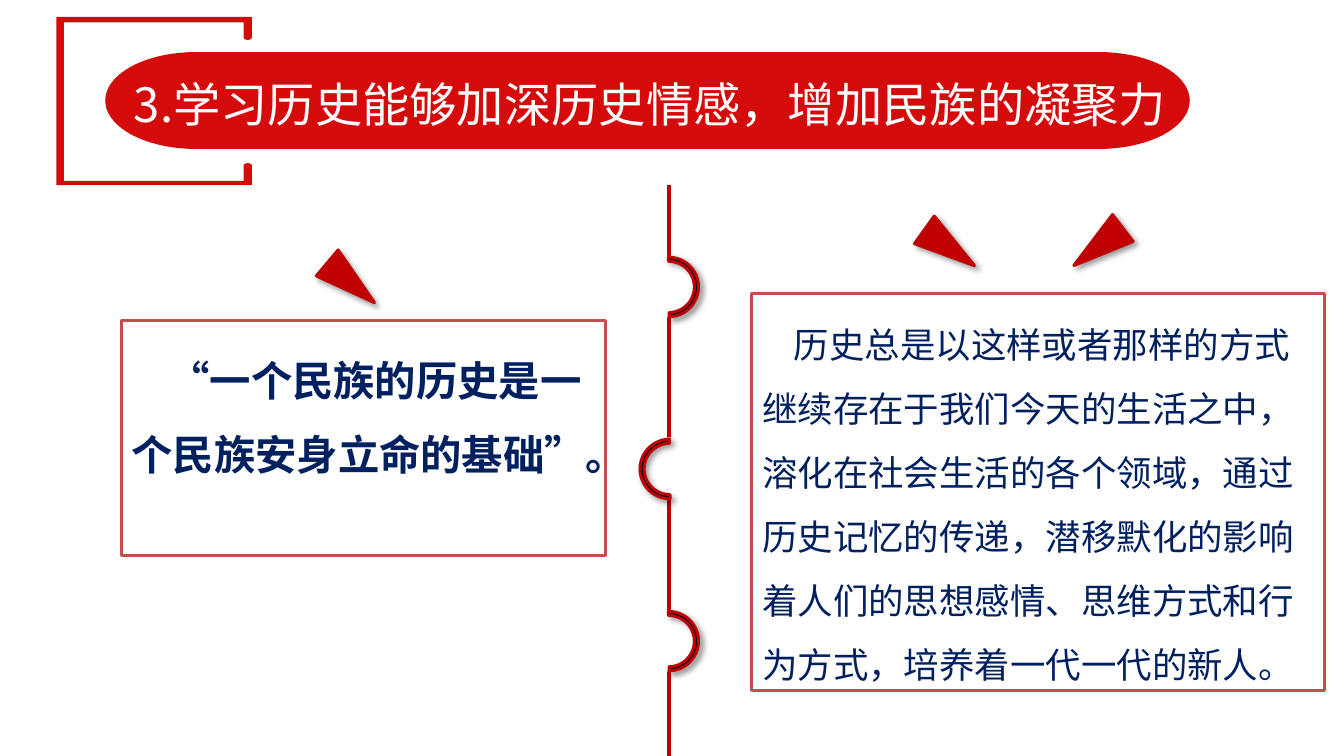
"""Build the slide on history and national cohesion."""
import math
import lxml.etree
import pptx
import pptx.dml.color
import pptx.enum.shapes
import pptx.enum.text
import pptx.oxml.ns
import pptx.util

Pt = pptx.util.Pt
qn = pptx.oxml.ns.qn
KIND = pptx.enum.shapes.MSO_SHAPE
FONT = "Noto Sans CJK SC"
COLORS = {"banner": "D50B0B", "red": "C00000", "frame": "C0504D",
          "navy": "002060", "white": "FFFFFF", "black": "000000"}
RGB = {name: pptx.dml.color.RGBColor.from_string(code) for name, code in COLORS.items()}


def paint(shape, fill, line=None, shade=False):
    shape.shadow.inherit = False
    shape.fill.solid()
    shape.fill.fore_color.rgb = RGB[fill]
    if line:
        shape.line.color.rgb = RGB[line]
        shape.line.width = Pt(2)
    else:
        shape.line.fill.background()
    if shade:
        effect = shape._element.spPr.find(qn("a:effectLst"))
        outer = lxml.etree.SubElement(effect, qn("a:outerShdw"), blurRad=str(Pt(4)),
                                      dist=str(Pt(3)), dir="2700000", algn="tl", rotWithShape="0")
        tint = lxml.etree.SubElement(outer, qn("a:srgbClr"), val=COLORS["black"])
        lxml.etree.SubElement(tint, qn("a:alpha"), val="40000")


def write(shape, text, size, color, pitch, side, top, indent=0, bold=False):
    frame = shape.text_frame
    frame.word_wrap = True
    frame.vertical_anchor = pptx.enum.text.MSO_ANCHOR.TOP
    frame.margin_left = frame.margin_right = Pt(side)
    frame.margin_top = Pt(top)
    frame.margin_bottom = Pt(0)
    para = frame.paragraphs[0]
    para.text = text
    para.alignment = pptx.enum.text.PP_ALIGN.LEFT
    para.line_spacing = Pt(pitch)
    para.font.size = Pt(size)
    para.font.bold = bold
    para.font.color.rgb = RGB[color]
    para.font.name = FONT
    props = para._p.pPr
    props.set("marL", "0")
    props.set("indent", str(Pt(indent)))
    lxml.etree.SubElement(props.find(qn("a:defRPr")), qn("a:ea"), typeface=FONT)


deck = pptx.Presentation()
deck.slide_width, deck.slide_height = Pt(910.08), Pt(511.92)
slide = deck.slides.add_slide(deck.slide_layouts[6])
shapes = slide.shapes

pill = []
for mid, start in ((744.5, -90), (132.5, 90)):
    for step in range(0, 181, 5):
        turn = math.radians(start + step)
        pill.append((mid + 61.2 * math.cos(turn), 68.1 + 32.8 * math.sin(turn)))

hooks = []
for base, sign in ((25.2, 1), (112.3, -1)):
    arc = [math.radians(step) for step in range(0, 181, 15)]
    hooks.append([(167.75 + 2.85 * math.cos(turn), base + sign * 1.8 * math.sin(turn)) for turn in arc])
bracket = [(170.6, 125.3), (38.2, 125.3), (38.2, 11.5), (170.6, 11.5), *hooks[0],
           (164.9, 15.1), (43.2, 15.1), (43.2, 122.4), (164.9, 122.4), *reversed(hooks[1])]

for dots in (pill, bracket):
    dots = [(Pt(x), Pt(y)) for x, y in dots]
    path = shapes.build_freeform(*dots[0])
    path.add_line_segments(dots[1:], close=True)
    paint(path.convert_to_shape(), "banner")

title = shapes.add_textbox(Pt(80.6), Pt(47.5), Pt(752.4), Pt(42.5))
write(title, "3.学习历史能够加深历史情感，增加民族的凝聚力", 32, "white", 38, 10.1, 3.6)

spine = shapes.add_connector(pptx.enum.shapes.MSO_CONNECTOR.STRAIGHT,
                             Pt(452.9), Pt(125.3), Pt(452.9), Pt(511.9))
spine.line.color.rgb = RGB["red"]
spine.line.width = Pt(3)
lxml.etree.SubElement(spine._element.spPr, qn("a:effectLst"))

for hole, left, top, turn in ((435.6, 432.7, 174.2, 90), (432, 433.4, 297.4, 270),
                              (435.6, 432.7, 414, 90)):
    disc = shapes.add_shape(KIND.OVAL, Pt(hole), Pt(top - 1.2), Pt(42.5), Pt(42.5))
    paint(disc, "white")
    ring = shapes.add_shape(KIND.BLOCK_ARC, Pt(left), Pt(top), Pt(40.3), Pt(40.3))
    ring.rotation = turn
    for index, value in enumerate((107.593, 215.621, 0.07)):
        ring.adjustments[index] = value
    paint(ring, "black", "red", True)

quote = shapes.add_shape(KIND.RECTANGLE, Pt(82.1), Pt(216.7), Pt(328.3), Pt(159.8))
paint(quote, "white", "frame")
write(quote, "“一个民族的历史是一个民族安身立命的基础”。", 28, "navy", 50, 7.2, 7.4, 25, True)

body = shapes.add_shape(KIND.RECTANGLE, Pt(509), Pt(198.7), Pt(388.1), Pt(268.6))
paint(body, "white", "frame")
write(body, "历史总是以这样或者那样的方式继续存在于我们今天的生活之中，溶化在社会生活的各个领域，"
      "通过历史记忆的传递，潜移默化的影响着人们的思想感情、思维方式和行为方式，"
      "培养着一代一代的新人。", 24, "navy", 43.3, 7.2, 5.7, 21.5)

for left, top, turn in ((226.1, 170.6, 130.1), (631.4, 146.9, 125.6), (732.2, 146.2, 232.6)):
    wedge = shapes.add_shape(KIND.ISOSCELES_TRIANGLE, Pt(left), Pt(top), Pt(23), Pt(41.8))
    wedge.rotation = turn
    paint(wedge, "red", "red", True)

deck.save("out.pptx")
